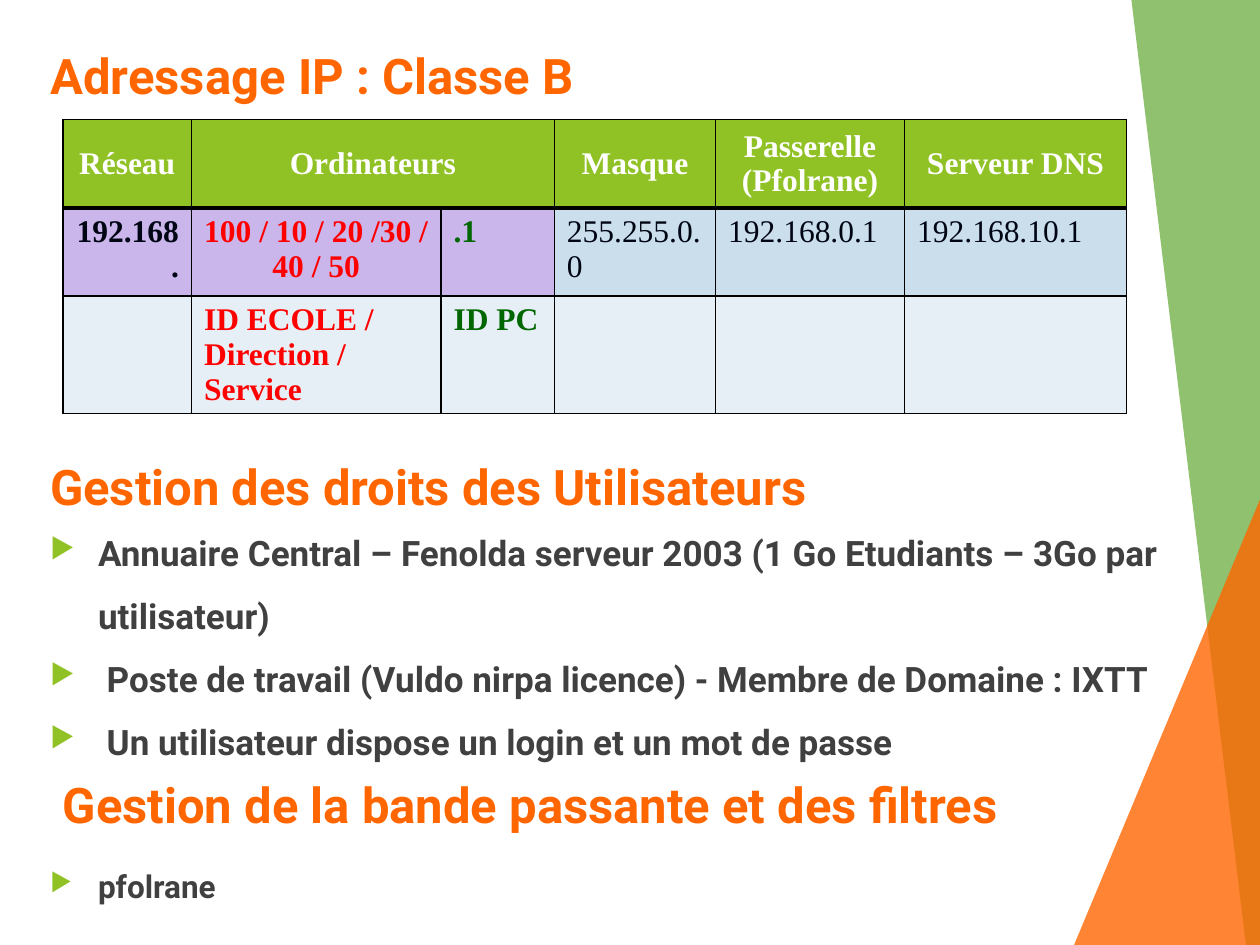
from dataclasses import dataclass

from lxml.etree import SubElement
from pptx import Presentation
from pptx.dml.color import RGBColor
from pptx.enum.shapes import MSO_SHAPE
from pptx.enum.text import MSO_ANCHOR, MSO_AUTO_SIZE, PP_ALIGN
from pptx.oxml.ns import qn
from pptx.util import Inches, Pt


@dataclass(frozen=True)
class Theme:
    heading_font: str = "Roboto"
    table_font: str = "Times New Roman"
    heading_size: int = 28
    bullet_size: int = 20
    small_size: int = 18
    orange: str = "FF6600"
    leaf: str = "54A021"
    lime: str = "90C226"
    body: str = "404040"
    white: str = "FFFFFF"
    black: str = "000000"
    ink: str = "000514"
    red: str = "FF0000"
    green: str = "006600"
    lilac: str = "CBB6EC"
    sky: str = "CBDEEC"
    pale: str = "E7EFF6"


THEME = Theme()


@dataclass(frozen=True)
class Box:
    left: float
    top: float
    width: float
    height: float

    def lengths(self):
        return [Inches(n) for n in (self.left, self.top, self.width, self.height)]


@dataclass(frozen=True)
class Style:
    font: str
    size: int
    color: str
    bold: bool = True


@dataclass(frozen=True)
class TableCell:
    text: str
    fill: str
    color: str = THEME.ink
    bold: bool = True
    align: PP_ALIGN = PP_ALIGN.LEFT


HEADING = Style(THEME.heading_font, THEME.heading_size, THEME.orange)
BULLET = Style(THEME.heading_font, THEME.bullet_size, THEME.body)
SMALL_BULLET = Style(THEME.heading_font, THEME.small_size, THEME.body)


def header(text: str) -> TableCell:
    return TableCell(text, THEME.lime, THEME.white, align=PP_ALIGN.CENTER)


def blank() -> TableCell:
    return TableCell("", THEME.pale)


COLUMNS = (1.02, 1.98, 0.9, 1.28, 1.5, 1.76)
ROWS = (0.7, 0.7, 0.89)
CELLS = (
    (header("Réseau"), header("Ordinateurs"), header(""), header("Masque"),
     header("Passerelle\n(Pfolrane)"), header("Serveur DNS")),
    (TableCell("192.168.", THEME.lilac, align=PP_ALIGN.RIGHT),
     TableCell("100 / 10 / 20 /30 / 40 / 50", THEME.lilac, THEME.red, align=PP_ALIGN.CENTER),
     TableCell(".1", THEME.lilac, THEME.green),
     TableCell("255.255.0.0", THEME.sky, bold=False),
     TableCell("192.168.0.1", THEME.sky, bold=False),
     TableCell("192.168.10.1", THEME.sky, bold=False)),
    (blank(), TableCell("ID ECOLE / Direction / Service", THEME.pale, THEME.red),
     TableCell("ID PC", THEME.pale, THEME.green), blank(), blank(), blank()),
)


def add_span(para, text: str, style: Style) -> None:
    span = para.add_run()
    span.text = text
    span.font.name = style.font
    span.font.size = Pt(style.size)
    span.font.bold = style.bold
    span.font.color.rgb = RGBColor.from_string(style.color)


def add_bullet(para) -> None:
    para.line_spacing = 1.5
    properties = para._p.get_or_add_pPr()
    properties.set("marL", str(Inches(0.38)))
    properties.set("indent", str(-Inches(0.38)))
    color = SubElement(properties, qn("a:buClr"))
    SubElement(color, qn("a:srgbClr"), val=THEME.lime)
    SubElement(properties, qn("a:buSzPct"), val="80000")
    SubElement(properties, qn("a:buChar"), char="▶")


def write_text(frame, lines: tuple[str, ...], style: Style,
               align: PP_ALIGN = PP_ALIGN.LEFT, bulleted: bool = False) -> None:
    for index, line in enumerate(lines):
        para = frame.paragraphs[0] if index == 0 else frame.add_paragraph()
        para.alignment = align
        if bulleted:
            add_bullet(para)
        add_span(para, line, style)


def add_text(page, box: Box, lines: tuple[str, ...], style: Style, bulleted: bool = False) -> None:
    frame = page.shapes.add_textbox(*box.lengths()).text_frame
    frame.word_wrap = True
    write_text(frame, lines, style, bulleted=bulleted)


def set_title(page, box: Box, text: str) -> None:
    title = page.shapes.title
    title.left, title.top, title.width, title.height = box.lengths()
    frame = title.text_frame
    frame.word_wrap = True
    frame.auto_size = MSO_AUTO_SIZE.NONE
    frame.vertical_anchor = MSO_ANCHOR.TOP
    write_text(frame, (text,), HEADING)


def paint(shape, color: str, opacity: int) -> None:
    shape.shadow.inherit = False
    shape.fill.solid()
    shape.fill.fore_color.rgb = RGBColor.from_string(color)
    shape.line.fill.background()
    tint = shape.fill._xPr.find(qn("a:solidFill"))[0]
    SubElement(tint, qn("a:alpha"), val=str(opacity * 1000))


def add_decoration(page) -> None:
    corners = [(Inches(x), Inches(y)) for x, y in ((10.01, 0), (10.01, 7.51), (9.89, 7.51))]
    builder = page.shapes.build_freeform(Inches(8.98), Inches(0), scale=1.0)
    builder.add_line_segments(corners, close=True)
    paint(builder.convert_to_shape(), THEME.leaf, 65)
    triangle = page.shapes.add_shape(MSO_SHAPE.ISOSCELES_TRIANGLE, *Box(8.52, 3.94, 1.49, 3.57).lengths())
    triangle.adjustments[0] = 1
    paint(triangle, THEME.orange, 80)


def set_borders(cell, top: int, bottom: int) -> None:
    properties = cell._tc.get_or_add_tcPr()
    for side, points in (("L", 1), ("R", 1), ("T", top), ("B", bottom)):
        line = SubElement(properties, qn(f"a:ln{side}"), w=str(Pt(points)))
        fill = SubElement(line, qn("a:solidFill"))
        SubElement(fill, qn("a:srgbClr"), val=THEME.black)


def fill_cell(cell, content: TableCell, row: int) -> None:
    set_borders(cell, top=3 if row == 1 else 1, bottom=3 if row == 0 else 1)
    cell.fill.solid()
    cell.fill.fore_color.rgb = RGBColor.from_string(content.fill)
    cell.vertical_anchor = MSO_ANCHOR.MIDDLE if row == 0 else MSO_ANCHOR.TOP
    if content.text:
        style = Style(THEME.table_font, THEME.small_size, content.color, content.bold)
        write_text(cell.text_frame, tuple(content.text.split("\n")), style, content.align)


def add_address_table(page) -> None:
    box = Box(0.5, 0.95, sum(COLUMNS), sum(ROWS))
    table = page.shapes.add_table(len(ROWS), len(COLUMNS), *box.lengths()).table
    for column, width in zip(table.columns, COLUMNS):
        column.width = Inches(width)
    for row, height in zip(table.rows, ROWS):
        row.height = Inches(height)
    for row, contents in enumerate(CELLS):
        for column, content in enumerate(contents):
            fill_cell(table.cell(row, column), content, row)
    table.cell(0, 1).merge(table.cell(0, 2))


def main() -> None:
    deck = Presentation()
    deck.slide_width, deck.slide_height = Inches(10), Inches(7.5)
    page = deck.slides.add_slide(deck.slide_layouts[5])
    add_decoration(page)
    set_title(page, Box(0.3, 0.31, 6.94, 0.85), "Adressage IP : Classe B")
    add_address_table(page)
    add_text(page, Box(0.3, 3.57, 8.64, 0.85), ("Gestion des droits des Utilisateurs",), HEADING)
    add_text(page, Box(0.3, 4, 9.43, 2.12), (
        "Annuaire Central – Fenolda serveur 2003 (1 Go Etudiants – 3Go par utilisateur)",
        " Poste de travail (Vuldo nirpa licence) - Membre de Domaine : IXTT",
        " Un utilisateur dispose un login et un mot de passe",
    ), BULLET, bulleted=True)
    add_text(page, Box(0.4, 6.1, 8.64, 0.85), ("Gestion de la bande passante et des filtres",), HEADING)
    add_text(page, Box(0.3, 6.68, 8.16, 0.56), ("pfolrane",), SMALL_BULLET, bulleted=True)
    deck.save("out.pptx")


if __name__ == "__main__":
    main()
